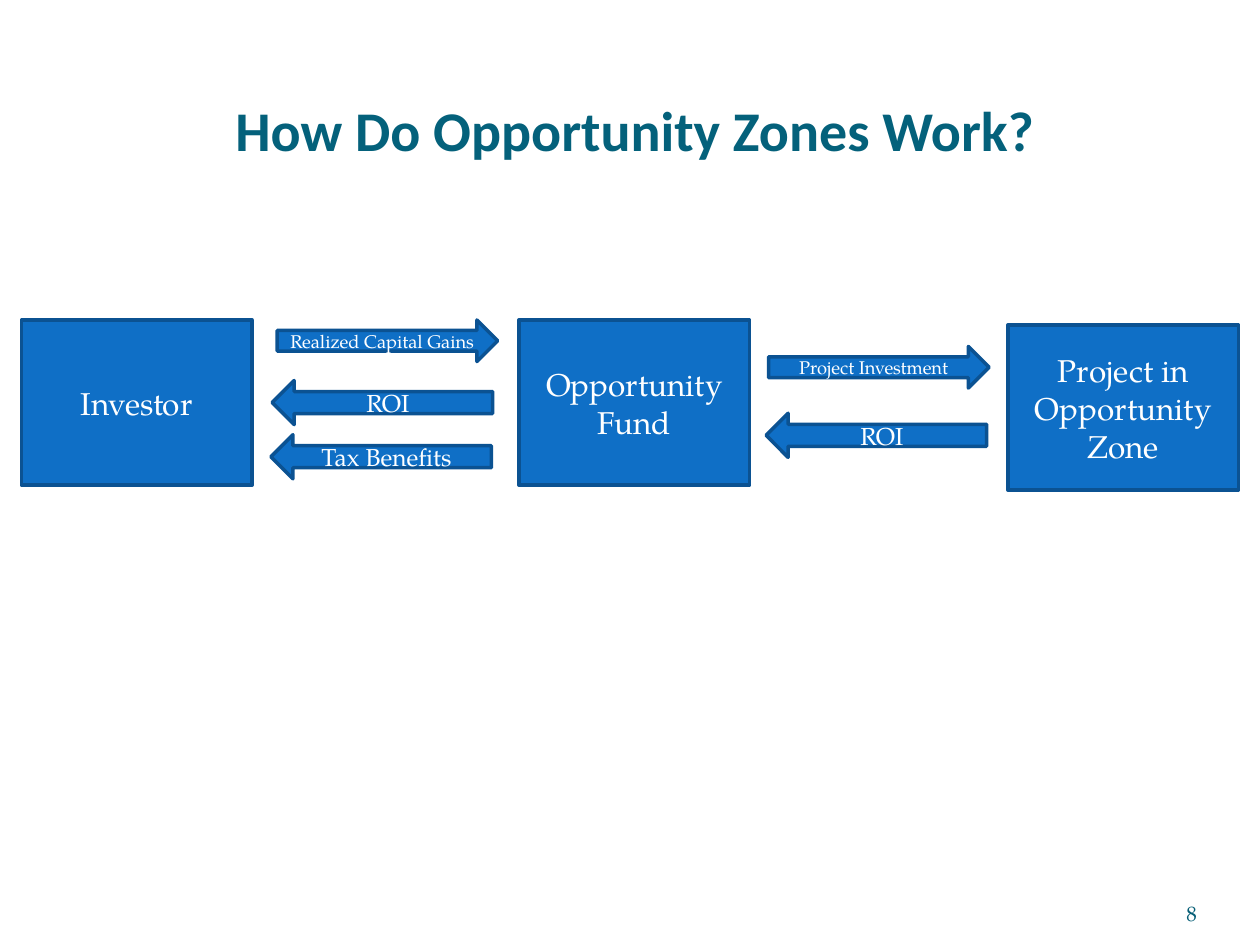
from pptx import Presentation, util as u
from pptx.dml.color import RGBColor
from pptx.enum import shapes, text

SERIF = "TeX Gyre Pagella"
BOX_SIZE = (1.83, 1.31)
ARROW_WIDTH = 1.75
KINDS = shapes.MSO_SHAPE
ALIGN = text.PP_ALIGN
ANCHOR = text.MSO_ANCHOR


def color(hex_code):
    return RGBColor.from_string(hex_code)


def write(shape, content, size, font=SERIF, ink="FFFFFF", bold=False,
          align=ALIGN.CENTER, anchor=ANCHOR.MIDDLE, insets=None):
    """Fill a shape with text, one paragraph per line of content."""
    frame = shape.text_frame
    frame.word_wrap = True
    frame.vertical_anchor = anchor
    if insets:
        (frame.margin_left, frame.margin_top,
         frame.margin_right, frame.margin_bottom) = map(u.Inches, insets)
    for index, line in enumerate(content.split("\n")):
        para = frame.paragraphs[0] if index == 0 else frame.add_paragraph()
        para.alignment = align
        span = para.add_run()
        span.text = line
        span.font.size = u.Pt(size)
        span.font.name = font
        span.font.bold = bold
        span.font.color.rgb = color(ink)


def add_label(page, area, content, size, **style):
    box = page.shapes.add_textbox(*map(u.Inches, area))
    write(box, content, size, anchor=ANCHOR.BOTTOM, **style)


def add_block(page, kind, area, content, size):
    """Add a blue outlined shape with centred white text."""
    block = page.shapes.add_shape(kind, *map(u.Inches, area))
    block.shadow.inherit = False
    block.fill.solid()
    block.fill.fore_color.rgb = color("0F6FC6")
    block.line.color.rgb = color("0B5292")
    block.line.width = u.Pt(2)
    write(block, content, size)


def add_party(page, left, top, name):
    add_block(page, KINDS.FLOWCHART_PROCESS, (left, top, *BOX_SIZE), name, 18)


def add_outflow(page, left, top, name):
    add_block(page, KINDS.RIGHT_ARROW, (left, top, ARROW_WIDTH, 0.33), name, 10.5)


def add_return(page, left, top, name):
    add_block(page, KINDS.LEFT_ARROW, (left, top, ARROW_WIDTH, 0.35), name, 14)


def main():
    deck = Presentation()
    deck.slide_width, deck.slide_height = u.Inches(10), u.Inches(7.5)
    page = deck.slides.add_slide(deck.slide_layouts[6])

    add_label(page, (0.5, 0.77, 9.08, 0.52), "How Do Opportunity Zones Work?", 32,
              font="Calibri", ink="04617B", bold=True, insets=(0, 0.05, 0, 0))
    add_label(page, (8.67, 6.95, 0.83, 0.4), "8", 12,
              ink="045D75", align=ALIGN.RIGHT, insets=(0, 0, 0, 0))

    add_party(page, 4.12, 2.54, "Opportunity\nFund")
    add_party(page, 0.17, 2.54, "Investor")
    add_party(page, 8, 2.58, "Project in Opportunity Zone")

    add_return(page, 2.16, 3.02, "ROI")
    add_return(page, 2.15, 3.45, "Tax Benefits")
    add_return(page, 6.08, 3.28, "ROI")
    add_outflow(page, 2.2, 2.54, "Realized Capital Gains")
    add_outflow(page, 6.1, 2.75, "Project Investment")

    deck.save("out.pptx")


if __name__ == "__main__":
    main()
